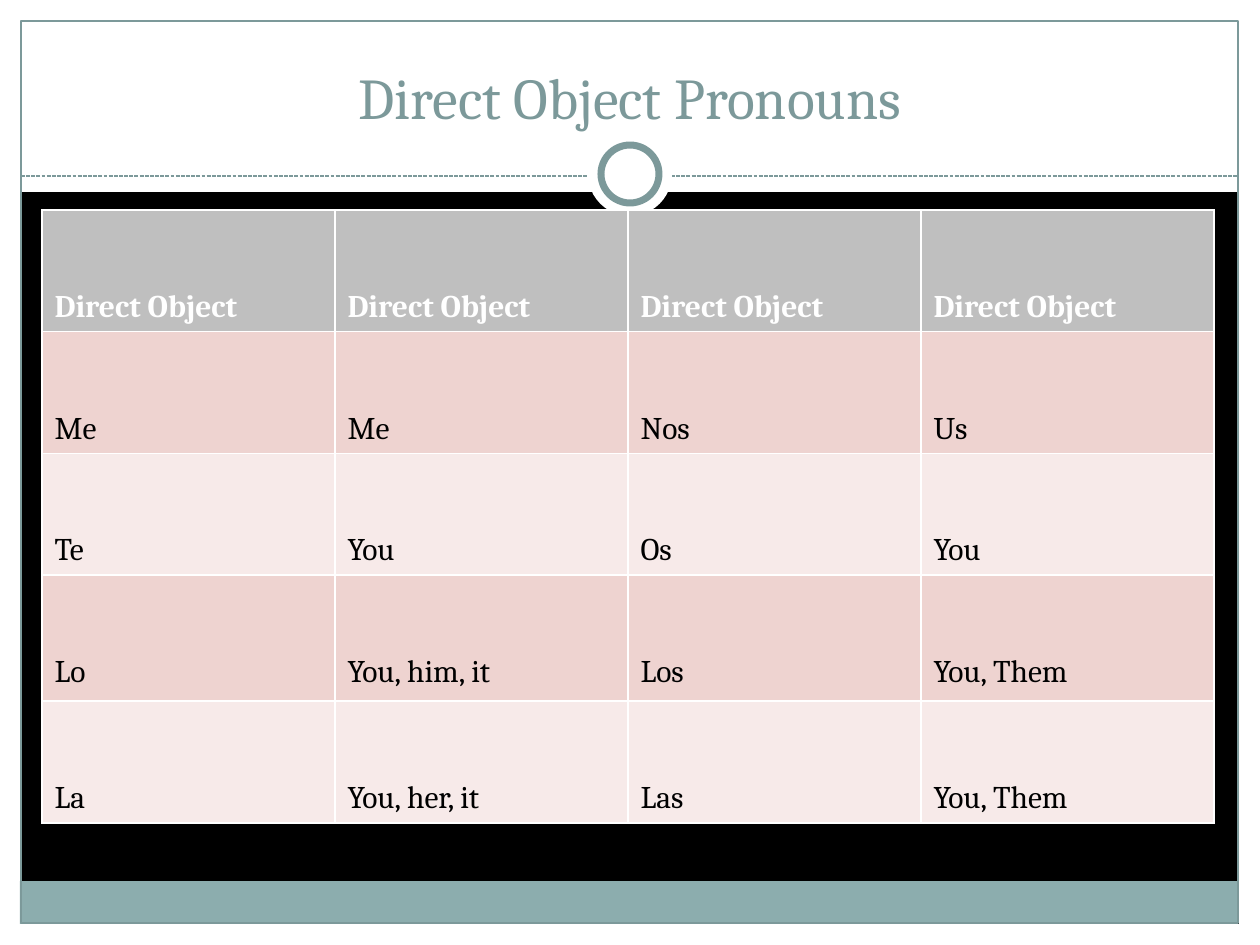
from pptx import Presentation
from pptx.dml.color import RGBColor
from pptx.enum.dml import MSO_LINE
from pptx.enum.shapes import MSO_CONNECTOR, MSO_SHAPE
from pptx.enum.text import MSO_ANCHOR, PP_ALIGN
from pptx.oxml.ns import qn
from pptx.util import Pt
from lxml.etree import SubElement

EMU_PER_PX = 914400 / 126
FONT = "Cambria"
COLORS = {
    "black": "000000",
    "white": "FFFFFF",
    "teal": "7C999A",
    "footer": "8CADAE",
    "header": "BFBFBF",
    "band_dark": "EED3D0",
    "band_light": "F7EAE9",
}
PRONOUNS = [
    ["Direct Object"] * 4,
    ["Me", "Me", "Nos", "Us"],
    ["Te", "You", "Os", "You"],
    ["Lo", "You, him, it", "Los", "You, Them"],
    ["La", "You, her, it", "Las", "You, Them"],
]
COLUMN_WIDTH = 293
ROW_HEIGHTS = [52, 52, 52, 126, 52]


def px(length):
    return round(length * EMU_PER_PX)


def color(name):
    return RGBColor.from_string(COLORS[name])


def add_panel(slide, box, fill=None, line=None, width=0.75, kind=MSO_SHAPE.RECTANGLE):
    panel = slide.shapes.add_shape(kind, *map(px, box))
    panel.shadow.inherit = False
    if fill:
        panel.fill.solid()
        panel.fill.fore_color.rgb = color(fill)
    else:
        panel.fill.background()
    if line:
        panel.line.color.rgb = color(line)
        panel.line.width = Pt(width)
    else:
        panel.line.fill.background()


def add_dashed_rule(slide, left, right, y):
    rule = slide.shapes.add_connector(
        MSO_CONNECTOR.STRAIGHT, px(left), px(y), px(right), px(y))
    rule.line.color.rgb = color("teal")
    rule.line.width = Pt(0.75)
    rule.line.dash_style = MSO_LINE.SQUARE_DOT
    SubElement(rule._element.spPr, qn("a:effectLst"))


def add_text(paragraph, text, size, text_color, bold=False):
    run = paragraph.add_run()
    run.text = text
    run.font.name = FONT
    run.font.size = Pt(size)
    run.font.bold = bold
    run.font.color.rgb = color(text_color)


def add_frame(slide):
    for margin in [(0, 924, 1260, 21), (0, 0, 1260, 192),
                   (0, 0, 21, 945), (1239, 0, 21, 945)]:
        add_panel(slide, margin, fill="white")
    add_panel(slide, (20, 881, 1217, 43), fill="footer")
    add_panel(slide, (21, 21, 1217, 902), line="teal")
    add_dashed_rule(slide, 21, 1239, 176)
    add_panel(slide, (588, 132, 84, 84), fill="white", kind=MSO_SHAPE.OVAL)
    add_panel(slide, (601, 145, 58, 58), fill="white", line="teal", width=4,
              kind=MSO_SHAPE.OVAL)


def set_title(slide, text):
    """Format the title placeholder and raise it above the frame."""
    title = slide.shapes.title
    title.left, title.top, title.width, title.height = map(px, (42, 32, 1176, 105))
    title.text_frame.vertical_anchor = MSO_ANCHOR.BOTTOM
    heading = title.text_frame.paragraphs[0]
    heading.alignment = PP_ALIGN.CENTER
    add_text(heading, text, 33, "teal")
    slide.shapes._spTree.append(title._element)


def add_cell_borders(cell):
    properties = cell._tc.get_or_add_tcPr()
    for side in ("a:lnL", "a:lnR", "a:lnT", "a:lnB"):
        border = SubElement(properties, qn(side), w=str(Pt(1)))
        fill = SubElement(border, qn("a:solidFill"))
        SubElement(fill, qn("a:srgbClr"), val=COLORS["white"])


def fill_cell(cell, text, row):
    add_cell_borders(cell)
    cell.fill.solid()
    band = "header" if row == 0 else "band_dark" if row % 2 else "band_light"
    cell.fill.fore_color.rgb = color(band)
    entry = cell.text_frame.paragraphs[0]
    entry.line_spacing = 3.0
    add_text(entry, text, 18, "black" if row else "white", bold=row == 0)


def add_pronoun_table(slide):
    columns = len(PRONOUNS[0])
    table = slide.shapes.add_table(
        len(PRONOUNS), columns, px(42), px(210),
        px(columns * COLUMN_WIDTH), px(sum(ROW_HEIGHTS))).table
    for column in table.columns:
        column.width = px(COLUMN_WIDTH)
    for row, (height, words) in enumerate(zip(ROW_HEIGHTS, PRONOUNS)):
        table.rows[row].height = px(height)
        for column, word in enumerate(words):
            fill_cell(table.cell(row, column), word, row)


def main():
    deck = Presentation()
    deck.slide_width, deck.slide_height = px(1260), px(945)
    slide = deck.slides.add_slide(deck.slide_layouts[5])
    slide.background.fill.solid()
    slide.background.fill.fore_color.rgb = color("black")
    add_frame(slide)
    set_title(slide, "Direct Object Pronouns")
    add_pronoun_table(slide)
    deck.save("out.pptx")


if __name__ == "__main__":
    main()
